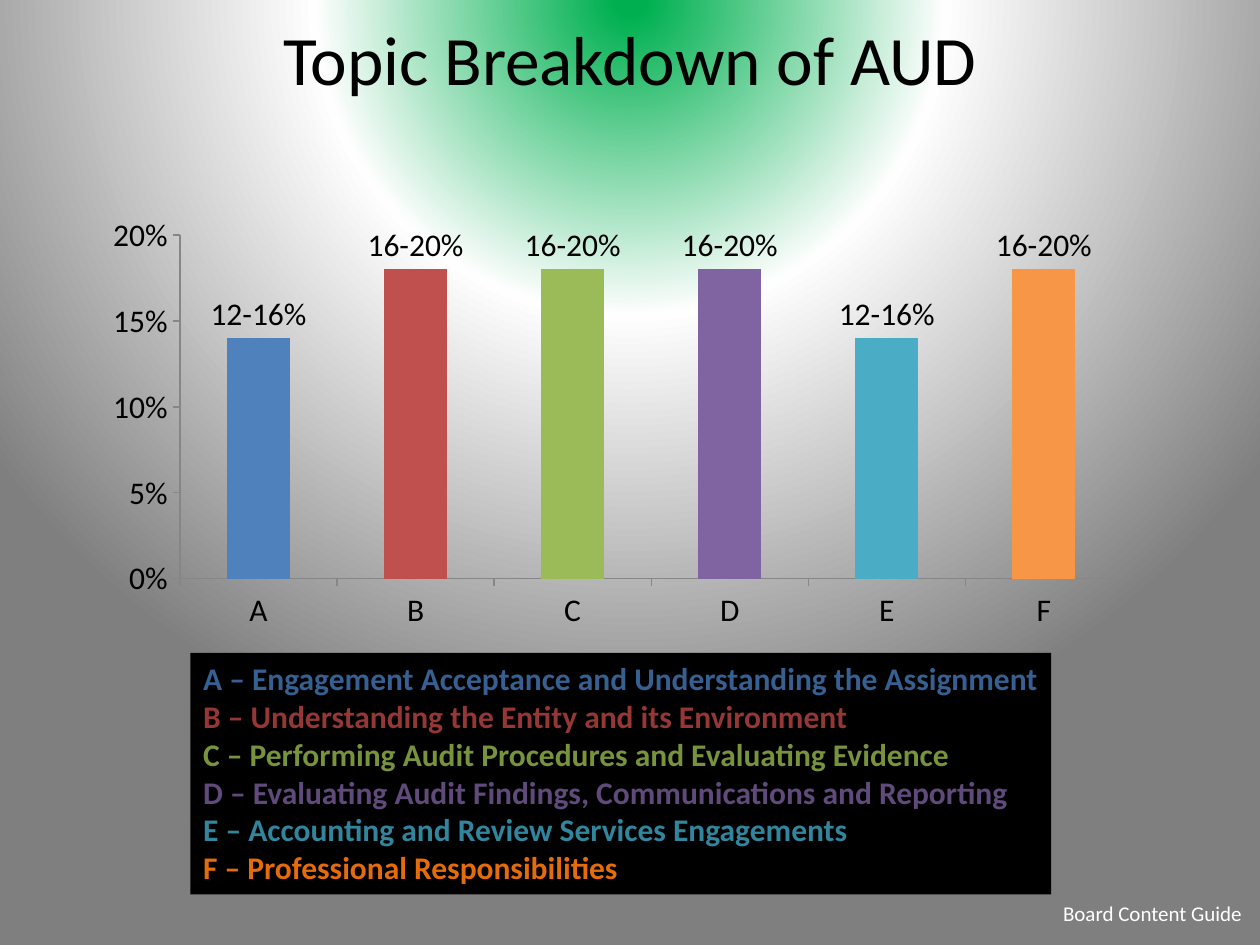
"""Builds the AUD topic breakdown slide."""
import dataclasses

import lxml.etree
import pptx
import pptx.chart.data
import pptx.dml.color
import pptx.enum.chart
import pptx.enum.text
import pptx.oxml
import pptx.oxml.ns
import pptx.util

Cm = pptx.util.Cm
Pt = pptx.util.Pt
qn = pptx.oxml.ns.qn
RGB = pptx.dml.color.RGBColor.from_string


@dataclasses.dataclass(frozen=True)
class Theme:
    font: str = "Calibri"
    dark: str = "000000"
    light: str = "FFFFFF"
    axis: str = "868686"
    title_size: float = 39.6
    body_size: float = 18
    credit_size: float = 12
    glow: tuple = ((2, "00B050"), (40, "FEFEFE"), (100, "7F7F7F"))


THEME = Theme()

TOPICS = (
    ("A", "Engagement Acceptance and Understanding the Assignment", 0.14, "12-16%", "4F81BD", "376092"),
    ("B", "Understanding the Entity and its Environment", 0.18, "16-20%", "C0504D", "953735"),
    ("C", "Performing Audit Procedures and Evaluating Evidence", 0.18, "16-20%", "9BBB59", "77933C"),
    ("D", "Evaluating Audit Findings, Communications and Reporting", 0.18, "16-20%", "8064A2", "604A7B"),
    ("E", "Accounting and Review Services Engagements", 0.14, "12-16%", "4BACC6", "31859C"),
    ("F", "Professional Responsibilities", 0.18, "16-20%", "F79646", "E46C0A"),
)


def style_font(font, size=THEME.body_size, color=THEME.dark, bold=False):
    """Apply the theme font with a size, colour and weight."""
    font.name = THEME.font
    font.size = Pt(size)
    font.bold = bold
    font.color.rgb = RGB(color)


def write_text(paragraph, text, align=None, **style):
    """Put one formatted run into a paragraph."""
    run = paragraph.add_run()
    run.text = text
    style_font(run.font, **style)
    if align is not None:
        paragraph.alignment = align


def place(shape, left, top, width, height):
    """Move and size a shape, in centimetres."""
    shape.left, shape.top = Cm(left), Cm(top)
    shape.width, shape.height = Cm(width), Cm(height)


def paint_background(slide):
    """Fill the background with a round glow centred above the slide."""
    slide.background.fill.gradient()
    gradient = slide.element.find(".//" + qn("a:gradFill"))
    for child in list(gradient):
        gradient.remove(child)
    stops = lxml.etree.SubElement(gradient, qn("a:gsLst"))
    for position, color in THEME.glow:
        stop = lxml.etree.SubElement(stops, qn("a:gs"), pos=str(position * 1000))
        lxml.etree.SubElement(stop, qn("a:srgbClr"), val=color)
    circle = lxml.etree.SubElement(gradient, qn("a:path"))
    circle.set("path", "circle")
    lxml.etree.SubElement(circle, qn("a:fillToRect"), l="50000", t="-80000", r="50000", b="180000")


def add_title(slide, text):
    """Fill the title placeholder."""
    title = slide.shapes.title
    place(title, 1.27, 0.2, 22.86, 1.91)
    title.text_frame.vertical_anchor = pptx.enum.text.MSO_ANCHOR.MIDDLE
    write_text(title.text_frame.paragraphs[0], text,
               align=pptx.enum.text.PP_ALIGN.CENTER, size=THEME.title_size)


def fix_plot_area(chart, x, y, w, h):
    """Pin the inner plot area and leave the chart without fills."""
    space = chart.element
    plot_area = space.find(".//" + qn("c:plotArea"))
    for old in plot_area.findall(qn("c:layout")):
        plot_area.remove(old)
    layout = lxml.etree.Element(qn("c:layout"))
    manual = lxml.etree.SubElement(layout, qn("c:manualLayout"))
    settings = dict(layoutTarget="inner", xMode="edge", yMode="edge", x=x, y=y, w=w, h=h)
    for name, value in settings.items():
        lxml.etree.SubElement(manual, qn("c:" + name), val=str(value))
    plot_area.insert(0, layout)
    clear = [lxml.etree.Element(qn("c:spPr")) for _ in range(2)]
    for properties in clear:
        lxml.etree.SubElement(properties, qn("a:noFill"))
    plot_area.append(clear[0])
    space.find(qn("c:chart")).addnext(clear[1])


def style_axis(axis):
    """Give an axis outward ticks, a thin line and no gridlines."""
    axis.has_major_gridlines = False
    axis.major_tick_mark = pptx.enum.chart.XL_TICK_MARK.OUTSIDE
    axis.minor_tick_mark = pptx.enum.chart.XL_TICK_MARK.NONE
    axis.format.line.color.rgb = RGB(THEME.axis)
    axis.format.line.width = Pt(0.75)
    style_font(axis.tick_labels.font)


def add_weight_chart(slide):
    """Add the column chart of topic weights."""
    weights = pptx.chart.data.CategoryChartData(number_format="0%")
    weights.categories = [topic[0] for topic in TOPICS]
    weights.add_series("Series 1", [topic[2] for topic in TOPICS])
    chart = slide.shapes.add_chart(
        pptx.enum.chart.XL_CHART_TYPE.COLUMN_CLUSTERED,
        Cm(1.47), Cm(2.54), Cm(21.59), Cm(11), weights).chart
    chart.has_legend = False
    chart.has_title = False
    fix_plot_area(chart, 0.1, 0.2, 0.88, 0.63)
    style_font(chart.font)
    style_axis(chart.category_axis)
    style_axis(chart.value_axis)
    chart.value_axis.minimum_scale = 0
    chart.value_axis.maximum_scale = 0.2
    chart.value_axis.major_unit = 0.05
    chart.value_axis.tick_labels.number_format = "0%"
    chart.value_axis.tick_labels.number_format_is_linked = False

    plot = chart.plots[0]
    plot.gap_width = 150
    plot.vary_by_categories = False
    above = pptx.enum.chart.XL_LABEL_POSITION.OUTSIDE_END
    labels = plot.series[0].data_labels
    labels.show_value = True
    labels.number_format = "0%"
    labels.number_format_is_linked = False
    labels.position = above
    style_font(labels.font)
    for index, (_, _, _, weight_range, bar_color, _) in enumerate(TOPICS):
        point = plot.series[0].points[index]
        point.format.fill.solid()
        point.format.fill.fore_color.rgb = RGB(bar_color)
        write_text(point.data_label.text_frame.paragraphs[0], weight_range)
        point.data_label.position = above


def add_topic_key(slide):
    """List the topics in the body placeholder, each in its colour."""
    key = slide.placeholders[1]
    place(key, 3.84, 13.16, 17.35, 4.87)
    key.fill.solid()
    key.fill.fore_color.rgb = RGB(THEME.dark)
    frame = key.text_frame
    frame.auto_size = pptx.enum.text.MSO_AUTO_SIZE.NONE
    for index, (letter, name, _, _, _, text_color) in enumerate(TOPICS):
        line = frame.add_paragraph() if index else frame.paragraphs[0]
        line.space_before = Pt(0)
        properties = line._p.get_or_add_pPr()
        properties.set("marL", "0")
        properties.set("indent", "0")
        lxml.etree.SubElement(properties, qn("a:buNone"))
        write_text(line, f"{letter} – {name}", color=text_color, bold=True)


def add_credit(slide, text):
    """Add the small source line at the lower right."""
    credit = slide.shapes.add_textbox(Cm(21.18), Cm(18.03), Cm(4.14), Cm(0.76))
    credit.text_frame.word_wrap = False
    write_text(credit.text_frame.paragraphs[0], text,
               size=THEME.credit_size, color=THEME.light)


def main():
    """Build and save the slide."""
    deck = pptx.Presentation()
    deck.slide_width, deck.slide_height = Cm(25.4), Cm(19.05)
    slide = deck.slides.add_slide(deck.slide_layouts[1])
    paint_background(slide)
    add_title(slide, "Topic Breakdown of AUD")
    add_weight_chart(slide)
    add_topic_key(slide)
    add_credit(slide, "Board Content Guide")
    deck.save("out.pptx")


if __name__ == "__main__":
    main()
